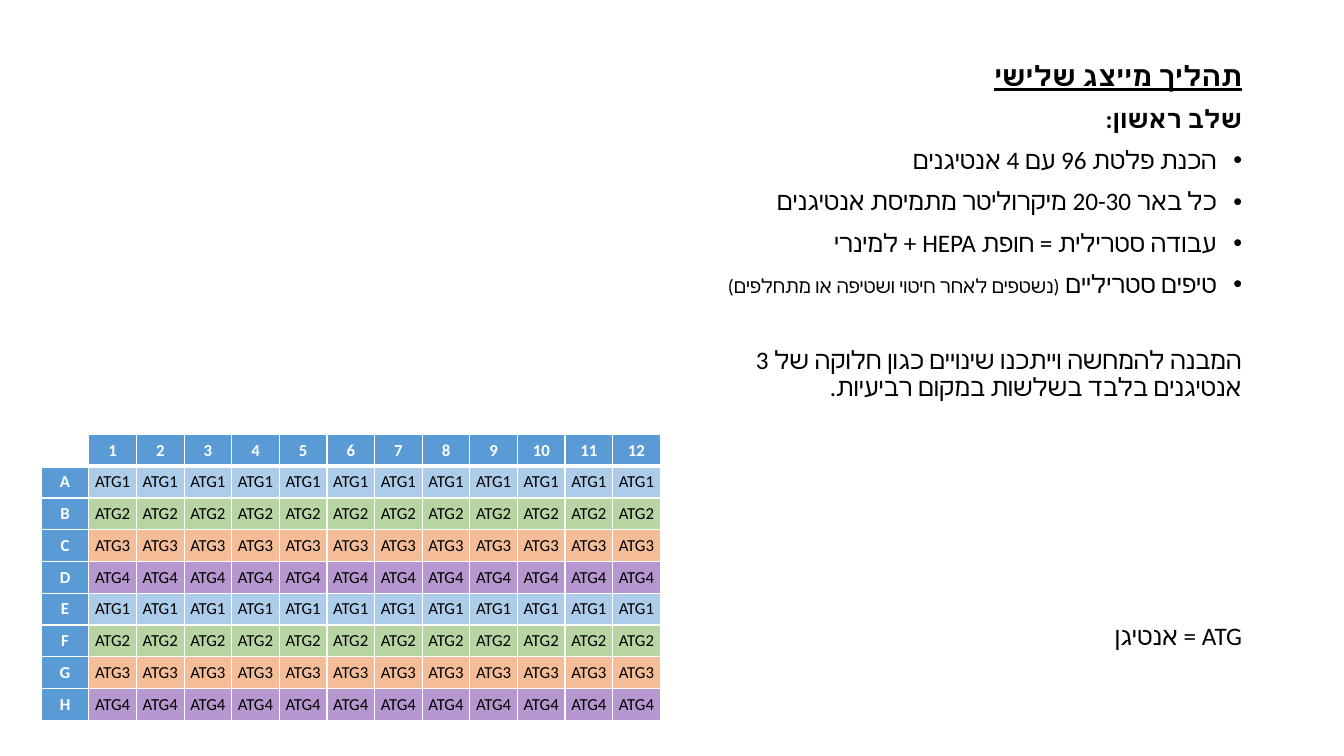
from pptx import Presentation
from pptx.dml.color import RGBColor as RGB
from pptx.enum.text import MSO_ANCHOR as Anchor, PP_ALIGN as Align
from pptx.oxml.ns import qn
from pptx.util import Cm, Pt
from lxml.etree import SubElement as Sub

FONT = "Calibri"
BLUE, WHITE, BLACK = "5B9BD5", "FFFFFF", "000000"
ANTIGENS = [BLUE, "70AD47", "ED7D31", "7030A0"]
ROWS, COLS = "ABCDEFGH", 12


def color(code):
    return RGB.from_string(code)


def add_run(para, text, size, ink=BLACK, bold=False, under=False):
    run = para.add_run()
    run.text = text
    font = run.font
    font.name, font.size, font.bold = FONT, Pt(size), bold
    font.underline = under
    font.color.rgb = color(ink)
    Sub(run._r.get_or_add_rPr(), qn("a:cs"), typeface=FONT)


def set_fill(cell, code, alpha=None):
    cell.fill.solid()
    cell.fill.fore_color.rgb = color(code)
    if alpha:
        tint = cell._tc.tcPr.find(qn("a:solidFill"))[0]
        Sub(tint, qn("a:alpha"), val=str(alpha * 1000))


def set_edges(cell, top, bottom):
    # Border lines come before the fill in the cell properties
    props = cell._tc.get_or_add_tcPr()
    sides = {"L": 1, "R": 1, "T": top, "B": bottom}
    for spot, (side, width) in enumerate(sides.items()):
        line = Sub(props, qn(f"a:ln{side}"), w=str(Pt(width)))
        Sub(Sub(line, qn("a:solidFill")), qn("a:srgbClr"), val=WHITE)
        props.insert(spot, line)


def write_cell(cell, text, ink, bold):
    cell.vertical_anchor = Anchor.MIDDLE
    para = cell.text_frame.paragraphs[0]
    para.alignment = Align.CENTER
    add_run(para, text, 12, ink, bold)


def draw_plate(slide, left, top, width, height):
    count = len(ROWS) + 1
    frame = slide.shapes.add_table(count, COLS + 1, left, top, width, height)
    table = frame.table
    table.first_row = table.horz_banding = False
    for col in table.columns:
        col.width = width // (COLS + 1)
    for r, row in enumerate(table.rows):
        row.height = height // count
        for c, cell in enumerate(row.cells):
            cell.margin_left = cell.margin_right = 0
            cell.margin_top = cell.margin_bottom = 0
            if r == 0 and c == 0:
                cell.fill.background()
            elif r == 0 or c == 0:
                set_fill(cell, BLUE)
                write_cell(cell, ROWS[r - 1] if c == 0 else str(c), WHITE, True)
            else:
                kind = (r - 1) % len(ANTIGENS)
                set_fill(cell, ANTIGENS[kind], 50)
                write_cell(cell, f"ATG{kind + 1}", BLACK, False)
            set_edges(cell, 3 if r == 1 else 1, 3 if r == 0 else 1)


def add_para(frame, first=False, before=10, bullet=False):
    para = frame.paragraphs[0] if first else frame.add_paragraph()
    para.alignment = Align.RIGHT
    para.line_spacing = 0.9
    para.space_before = Pt(before)
    props = para._p.get_or_add_pPr()
    props.set("rtl", "1")
    if bullet:
        props.set("marL", str(Cm(0.64)))
        props.set("indent", str(-Cm(0.64)))
        Sub(props, qn("a:buFont"), typeface="Arial")
        Sub(props, qn("a:buChar"), char="•")
    return para


def draw_steps(slide, left, top, width, height):
    frame = slide.shapes.add_textbox(left, top, width, height).text_frame
    frame.word_wrap = True

    # Headings
    add_run(add_para(frame, first=True), "תהליך מייצג שלישי", 20, bold=True, under=True)
    add_run(add_para(frame), "שלב ראשון:", 18, bold=True)

    # Bulleted steps
    for step in ["הכנת פלטת 96 עם 4 אנטיגנים",
                 "כל באר 20-30 מיקרוליטר מתמיסת אנטיגנים",
                 "עבודה סטרילית = חופת HEPA + למינרי",
                 "טיפים סטריליים "]:
        para = add_para(frame, bullet=True)
        add_run(para, step, 18)
    add_run(para, "(נשטפים לאחר חיטוי ושטיפה או מתחלפים)", 14)

    # Remark and key
    add_run(add_para(frame, before=35),
            "המבנה להמחשה וייתכנו שינויים כגון חלוקה של 3 "
            "אנטיגנים בלבד בשלשות במקום רביעיות.", 18)
    add_run(add_para(frame, before=158), "ATG = אנטיגן", 18)


def main():
    deck = Presentation()
    deck.slide_width, deck.slide_height = Cm(33.87), Cm(19.05)
    slide = deck.slides.add_slide(deck.slide_layouts[6])
    draw_plate(slide, Cm(1.04), Cm(10.95), Cm(15.6), Cm(7.2))
    draw_steps(slide, Cm(17.15), Cm(1.45), Cm(14.4), Cm(15.72))
    deck.save("out.pptx")


if __name__ == "__main__":
    main()
